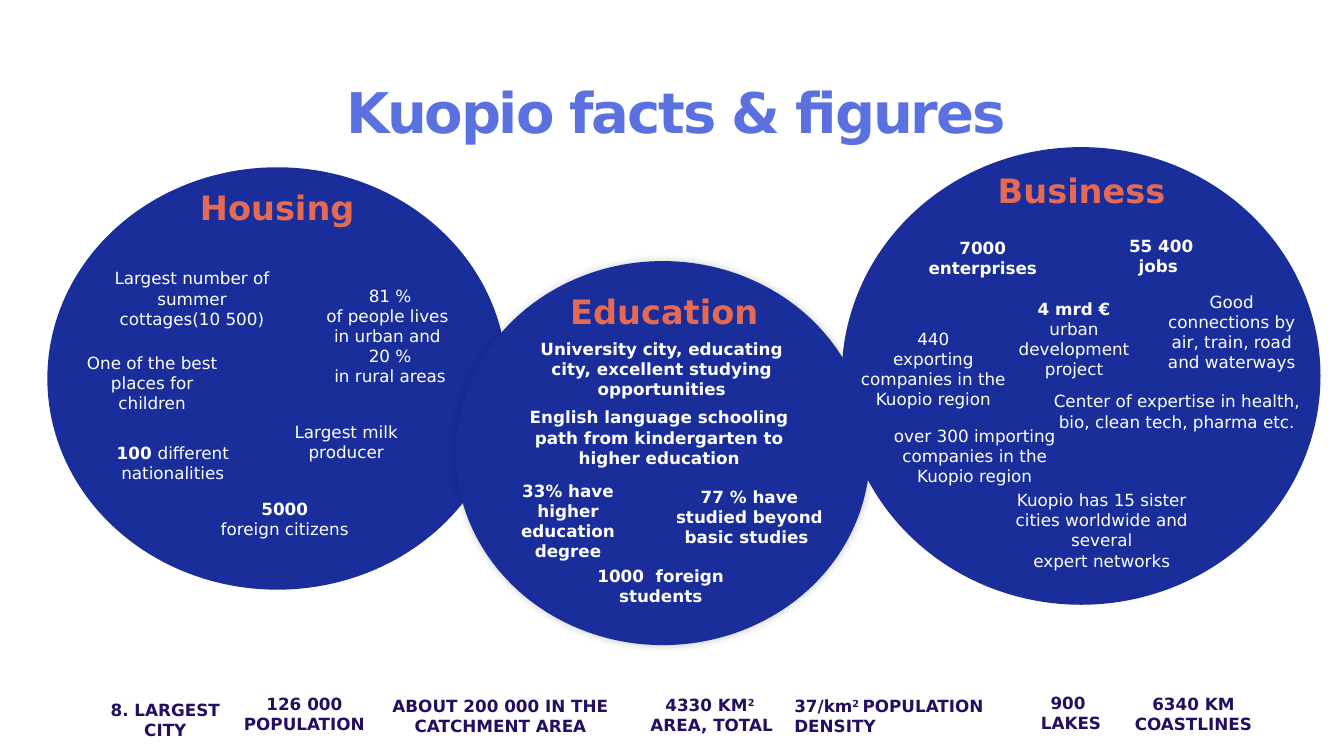
import pptx
import pptx.dml.color
import pptx.enum.shapes
import pptx.enum.text
import pptx.oxml
import pptx.oxml.ns
import pptx.util

COLUMNS, ROWS = 133.33, 75  # grid cells of a tenth of an inch
NAVY, INK, CORAL, SKY, WHITE = "192D9B", "250E62", "E56A54", "5A71DF", "FFFFFF"
ALIGN = pptx.enum.text.PP_ALIGN
BOLD, LIGHT = {"bold": True}, {"bold": False}
SUPER = {"bold": True, "baseline": 30000}
TIGHT, ROOMY = (0.6, 0.3), (1, 0.5)  # side and top insets


def cells(n):
    return pptx.util.Inches(n / 10)


def rgb(color):
    return pptx.dml.color.RGBColor.from_string(color)


class Deck:
    font_name = "DejaVu Sans"

    def __init__(self):
        self.prs = pptx.Presentation()
        self.prs.slide_width, self.prs.slide_height = cells(COLUMNS), cells(ROWS)
        self.s = self.prs.slides.add_slide(self.prs.slide_layouts[6])
        self.shapes = self.s.shapes

    def group(self):
        """Put the following elements into a new group."""
        self.shapes = self.s.shapes.add_group_shape().shapes

    def ungroup(self):
        self.shapes = self.s.shapes

    def circle(self, x, y, w, h, glow=False):
        oval = pptx.enum.shapes.MSO_SHAPE.OVAL
        sp = self.shapes.add_shape(oval, cells(x), cells(y), cells(w), cells(h))
        sp.fill.solid()
        sp.fill.fore_color.rgb = rgb(NAVY)
        sp.line.fill.background()
        sp.shadow.inherit = False
        if glow:
            effects = sp._element.spPr.find(pptx.oxml.ns.qn("a:effectLst"))
            effects.append(pptx.oxml.parse_xml(
                f'<a:outerShdw {pptx.oxml.ns.nsdecls("a")} blurRad="76200" dist="0" '
                'dir="18900000" algn="tl" rotWithShape="0"><a:srgbClr val="000000">'
                '<a:alpha val="20000"/></a:srgbClr></a:outerShdw>'))

    def add_runs(self, p, runs, size, color, base):
        """Fill a paragraph from a string or (text, format) pairs; ~ is a tie."""
        for text, look in [(runs, {})] if isinstance(runs, str) else runs:
            r = p.add_run()
            r.text = text.replace("~", chr(160))
            look = {"name": self.font_name, "size": pptx.util.Pt(size), **base, **look}
            marks = {k: look.pop(k) for k in ("baseline", "spc") if k in look}
            for name, value in look.items():
                setattr(r.font, name, value)
            r.font.color.rgb = rgb(color)
            for name, value in marks.items():
                r._r.get_or_add_rPr().set(name, str(value))

    def text(self, x, y, w, lines, *paragraphs, size=12, color=WHITE, base=LIGHT,
             align=ALIGN.CENTER, insets=TIGHT, fill=None):
        """Place a box as high as its number of lines at the given size."""
        side, top = insets
        h = lines * size / 6 + 2 * top
        sp = self.shapes.add_textbox(cells(x), cells(y), cells(w), cells(h))
        if fill:
            sp.fill.solid()
            sp.fill.fore_color.rgb = rgb(fill)
        tf = sp.text_frame
        frame = {"word_wrap": True,
                 "auto_size": pptx.enum.text.MSO_AUTO_SIZE.SHAPE_TO_FIT_TEXT,
                 "margin_left": cells(side), "margin_right": cells(side),
                 "margin_top": cells(top), "margin_bottom": cells(top)}
        for name, value in frame.items():
            setattr(tf, name, value)
        for i, runs in enumerate(paragraphs):
            p = tf.add_paragraph() if i else tf.paragraphs[0]
            p.alignment = align
            self.add_runs(p, runs, size, color, base)

    def heading(self, x, y, text):
        self.text(x, y, 25.2, 1, text, size=24, color=CORAL, base=BOLD)

    def fact(self, x, y, w, *paragraphs, **options):
        self.text(x, y, w, 2, *paragraphs, color=INK, base=BOLD, **options)

    def title(self, x, y, w, h, text):
        sp = self.shapes.add_textbox(cells(x), cells(y), cells(w), cells(h))
        tf = sp.text_frame
        frame = {"word_wrap": True, "vertical_anchor": pptx.enum.text.MSO_ANCHOR.MIDDLE,
                 "margin_left": 0, "margin_right": 0, "margin_top": 0, "margin_bottom": 0}
        for name, value in frame.items():
            setattr(tf, name, value)
        p = tf.paragraphs[0]
        p.line_spacing = 0.9
        self.add_runs(p, text, 40, SKY, {"bold": True, "spc": -150})


def main():
    d = Deck()

    d.fact(61.7, 68.6, 17.8, [("4330 KM", {}), ("2 ", SUPER)], "AREA, TOTAL", fill=WHITE)
    d.fact(110.6, 68.5, 15.6, "6340 KM", "COASTLINES")
    d.fact(100, 68.4, 12.5, "900 ", "LAKES", fill=WHITE)
    d.fact(23.3, 68.5, 13.8, "126 000", "POPULATION", fill=WHITE)
    d.fact(78.2, 68.7, 21.9, [("37/km", {}), ("2 ", SUPER), ("POPULATION DENSITY", {})],
           align=ALIGN.LEFT)
    d.fact(9.5, 69.1, 13.8, "8. LARGEST CITY")
    d.fact(38.2, 68.7, 22.9, "ABOUT 200 000 IN THE CATCHMENT AREA")

    d.group()
    d.circle(4.7, 16.6, 45.6, 41.9)
    d.text(8.8, 43.6, 16.7, 2, [("100 ", BOLD), ("different nationalities", {})])
    d.text(10.6, 26.3, 16.9, 3, "Largest number of summer cottages(10 500)")
    d.text(7.1, 34.7, 16, 3, "One of the best places for children")
    d.text(20.7, 49.2, 15.1, 2, [("5000", BOLD)], "foreign~citizens")
    d.text(31.6, 28, 14.2, 5, "81 % of~people~lives~in~urban~and~",
           "20 % in~rural~areas")
    d.heading(14.9, 18.2, "Housing")
    d.ungroup()

    d.circle(45.2, 25.9, 41.1, 38.1, glow=True)
    d.heading(53.3, 28.6, "Education")
    d.text(65.8, 48, 17.1, 3, "77 % have studied beyond basic studies ", base=BOLD)
    d.text(49.6, 40.1, 31.6, 3, "English language schooling path from kindergarten "
           "to higher education", base=BOLD)
    d.text(51, 33.3, 29.3, 3, "University city, educating city, excellent studying "
           "opportunities", base=BOLD)
    d.text(55.8, 55.6, 19.5, 2, "1000  foreign students", base=BOLD, insets=ROOMY)

    d.group()
    d.circle(83.5, 14.6, 47.5, 45.4)
    d.text(89.2, 23.3, 16.6, 2, "7000", "enterprises", base=BOLD)
    d.text(106.4, 23.1, 17.6, 2, "55 400", "jobs ", base=BOLD)
    d.text(98.7, 48.3, 21.2, 4, "Kuopio has 15 sister cities worldwide and several",
           "expert networks")
    d.text(87.3, 41.9, 18.8, 3, "over 300 importing companies in the Kuopio region")
    d.text(84.6, 32.3, 16, 4, "440", "exporting companies in the Kuopio region")
    d.heading(94.7, 16.6, "Business")
    d.text(103.3, 38.5, 26.9, 2,
           "Center of expertise in health, bio, clean tech, pharma etc.")
    d.text(98.8, 29.3, 15.5, 4, [("4 mrd €", BOLD)], "urban development project")
    d.text(114.2, 28.6, 16, 4, "Good connections by air, train, road and waterways")
    d.ungroup()

    d.text(47.9, 47.2, 16.9, 4, "33% have higher education degree", base=BOLD,
           insets=ROOMY)
    d.text(24.6, 41.3, 19.5, 2, "Largest milk producer", insets=ROOMY)
    d.title(34.4, 6.3, 78.1, 10.3, "Kuopio facts~&~figures")

    d.prs.save("out.pptx")


if __name__ == "__main__":
    main()
